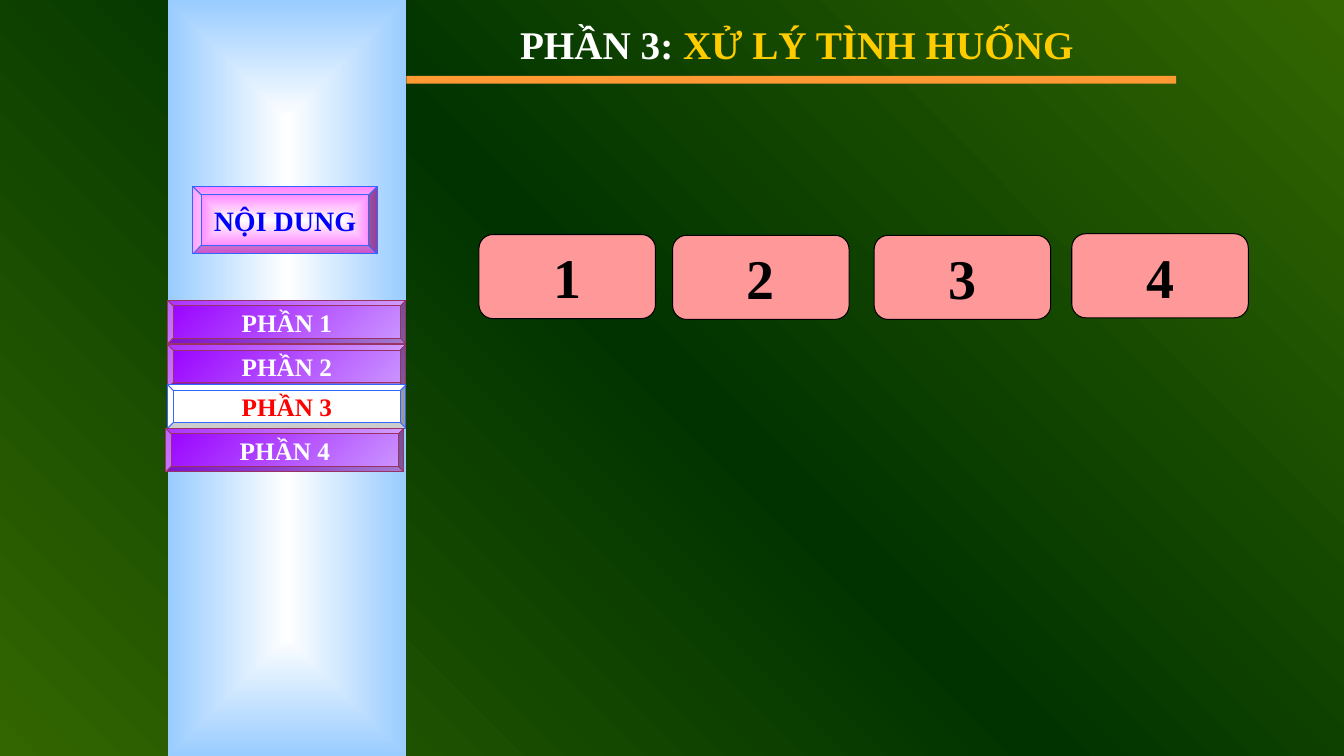
from lxml import etree
from pptx import Presentation
from pptx.dml.color import RGBColor
from pptx.enum.shapes import MSO_SHAPE
from pptx.enum.text import MSO_ANCHOR, MSO_AUTO_SIZE, PP_ALIGN
from pptx.oxml.ns import qn
from pptx.util import Cm, Pt

RECT, ROUND, BEVEL = MSO_SHAPE.RECTANGLE, MSO_SHAPE.ROUNDED_RECTANGLE, MSO_SHAPE.BEVEL
MIDDLE, TOP = MSO_ANCHOR.MIDDLE, MSO_ANCHOR.TOP
CENTER = PP_ALIGN.CENTER
GROW = MSO_AUTO_SIZE.SHAPE_TO_FIT_TEXT
FONT = "Times New Roman"
WIDE, HIGH = 33.87, 19.05


def color(text):
    return RGBColor.from_string(text)


def blend(fill, root, hues, angle=None, path="rect"):
    """Even gradient: linear with an angle, otherwise from the centre out."""
    fill.gradient()
    grad = root.find(".//" + qn("a:gradFill"))
    grad.clear()
    stops = etree.SubElement(grad, qn("a:gsLst"))
    for i, hue in enumerate(hues):
        stop = etree.SubElement(stops, qn("a:gs"), pos=str(100000 * i // (len(hues) - 1)))
        etree.SubElement(stop, qn("a:srgbClr"), val=hue)
    if angle is not None:
        etree.SubElement(grad, qn("a:lin"), ang=str(angle * 60000), scaled="1")
    else:
        way = etree.SubElement(grad, qn("a:path"), path=path)
        etree.SubElement(way, qn("a:fillToRect"), l="50000", t="50000", r="50000", b="50000")


def style(run, size, hue):
    font = run.font
    font.name, font.size, font.bold = FONT, Pt(size), True
    font.color.rgb = color(hue)


def block(slide, kind, box, fill=None, line=None):
    shape = slide.shapes.add_shape(kind, *[Cm(n) for n in box])
    shape.shadow.inherit = False
    if fill:
        shape.fill.solid()
        shape.fill.fore_color.rgb = color(fill)
    if line:
        shape.line.color.rgb = color(line)
        shape.line.width = Pt(0.75)
    else:
        shape.line.fill.background()
    return shape


def label(shape, text, size, hue):
    frame = shape.text_frame
    frame.text = text
    frame.vertical_anchor = MIDDLE
    para = frame.paragraphs[0]
    para.alignment = CENTER
    style(para.runs[0], size, hue)


def button(slide, box, text, size, hue, line, fill=None):
    shape = block(slide, BEVEL, box, fill, line)
    shape.adjustments[0] = 0.125
    label(shape, text, size, hue)
    frame = shape.text_frame
    frame.word_wrap = False
    frame.margin_left = frame.margin_right = Cm(0.05)
    frame.margin_top = frame.margin_bottom = Cm(0.03)
    return shape


def header(slide, box):
    left, top, width, height = box
    block(slide, RECT, (left, top + 1.91, width, 0.2), "FF9933")
    title = slide.shapes.title
    title.left, title.top = Cm(left + 0.28), Cm(top + 0.38)
    title.width, title.height = Cm(width - 0.28), Cm(height - 0.66)
    frame = title.text_frame
    frame.word_wrap, frame.auto_size = True, GROW
    frame.vertical_anchor = TOP
    para = frame.paragraphs[0]
    para.alignment = CENTER
    for text, hue in (("PHẦN 3:", "FFFFFF"), (" XỬ LÝ TÌNH HUỐNG", "FFCC00")):
        run = para.add_run()
        run.text = text
        style(run, 28, hue)


def sidebar(slide, box):
    left, top, width, height = box
    panel = block(slide, RECT, box)
    blend(panel.fill, panel._element, ("FFFFFF", "99CCFF"), path="shape")

    # Contents button
    head = button(slide, (left + 0.63, top + 4.7, 4.65, 1.7),
                  "NỘI DUNG", 20, "0000FF", "3366FF")
    blend(head.fill, head._element, ("FFFFFF", "FF66FF"))

    # Menu of parts, with the current one in white
    for i, (shift, drop) in enumerate(((0, 7.57), (0, 8.69), (0, 9.7), (-0.05, 10.8)), 1):
        place = (left + shift, top + drop, width, 1.09)
        text = f"PHẦN {i}"
        if i == 3:
            button(slide, place, text, 18, "FF0000", "3366FF", "FFFFFF")
        else:
            item = button(slide, place, text, 18, "FFFFFF", "993366")
            blend(item.fill, item._element, ("9900FF", "CC99FF"), 45)


def cards(slide, box):
    left, top, width, height = box
    for i, (shift, drop) in enumerate(((0, 0.02), (4.88, 0.04), (9.96, 0.04), (14.94, 0)), 1):
        card = block(slide, ROUND, (left + shift, top + drop, width, height),
                     "FF9999", "000000")
        card.adjustments[0] = 0.167
        label(card, str(i), 40, "000000")


def main():
    deck = Presentation()
    deck.slide_width, deck.slide_height = Cm(WIDE), Cm(HIGH)
    slide = deck.slides.add_slide(deck.slide_layouts[5])
    blend(slide.background.fill, slide._element, ("336600", "003300", "336600"), 315)
    header(slide, (10.24, 0, 19.4, 2.11))
    sidebar(slide, (4.23, 0, 6, HIGH))
    cards(slide, (12.07, 5.89, 4.45, 2.12))
    deck.save("out.pptx")


if __name__ == "__main__":
    main()
